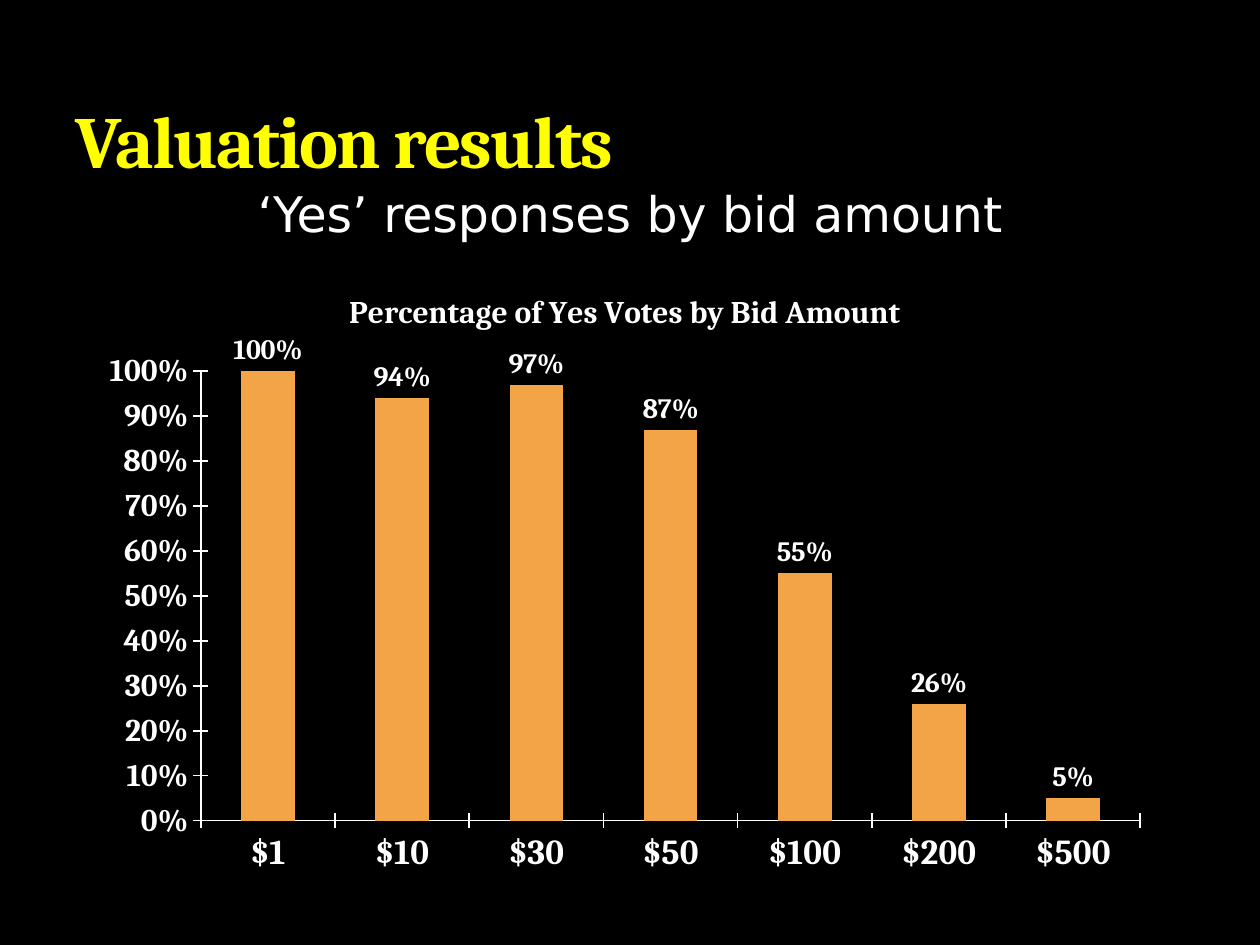
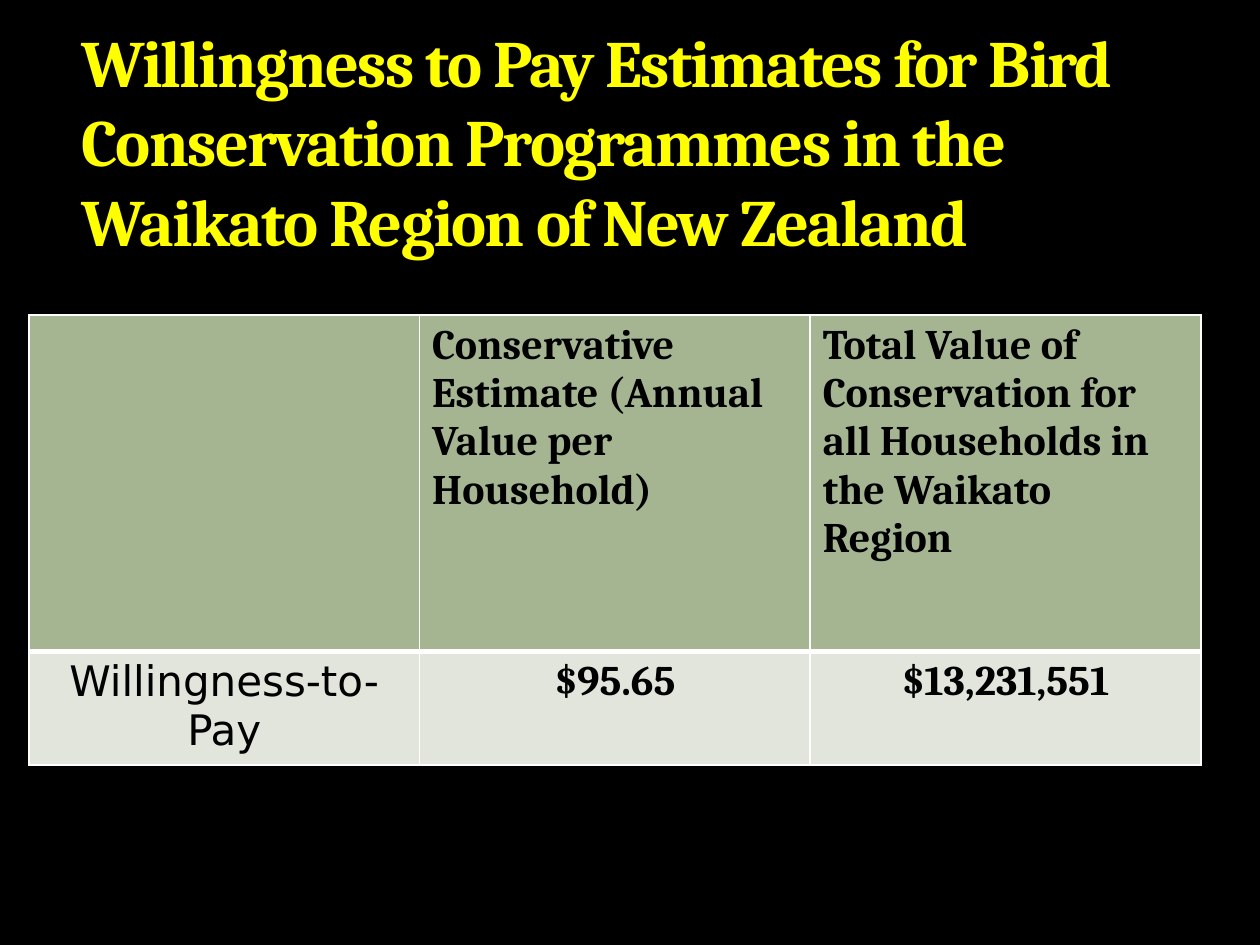
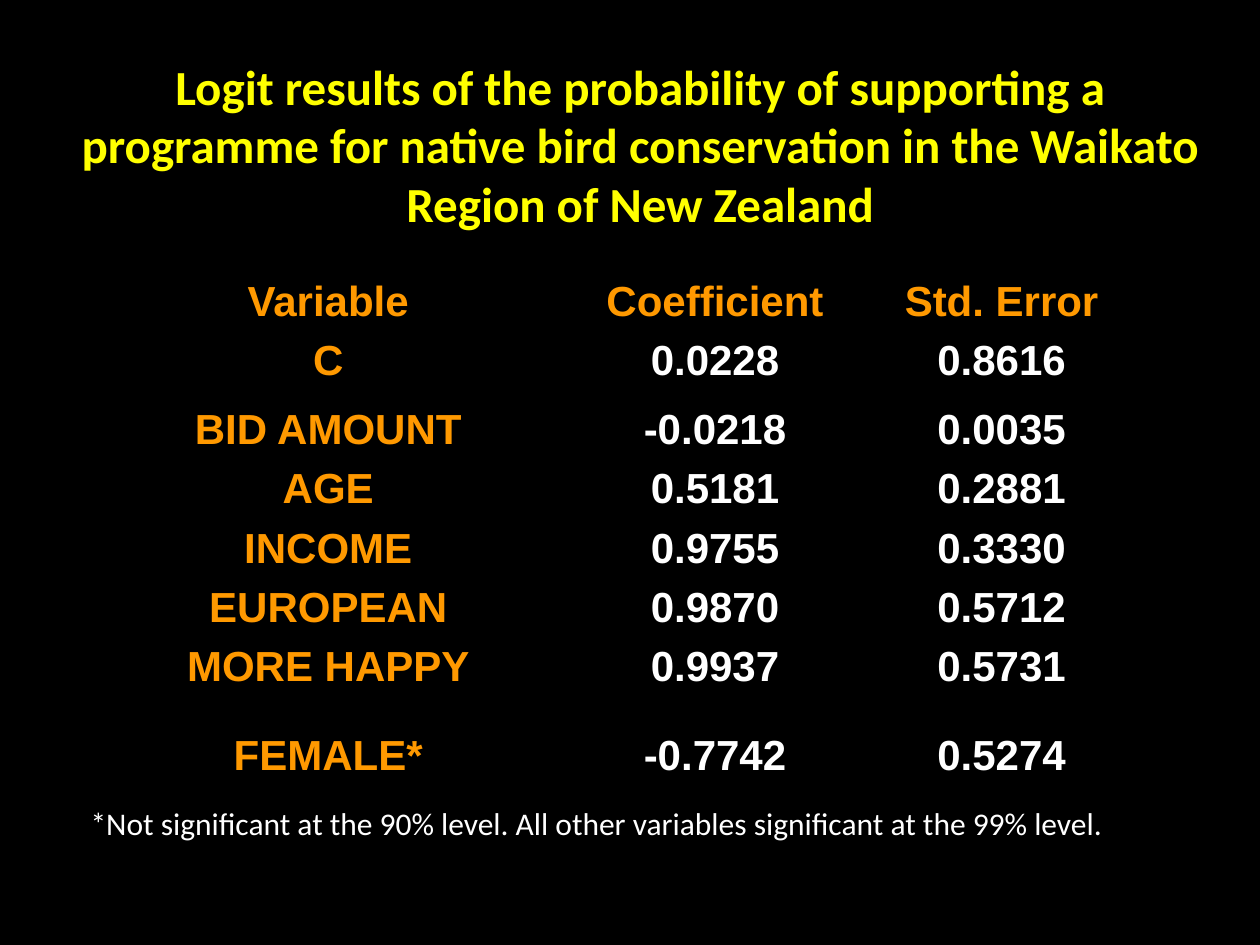
from dataclasses import dataclass

from lxml.etree import SubElement
from pptx import Presentation
from pptx.chart.data import CategoryChartData
from pptx.dml.color import RGBColor
from pptx.enum.chart import XL_CHART_TYPE, XL_LABEL_POSITION, XL_TICK_MARK
from pptx.enum.text import MSO_ANCHOR, PP_ALIGN
from pptx.oxml.ns import qn
from pptx.util import Inches, Pt


@dataclass(frozen=True)
class Theme:
    back: str = "000000"
    ink: str = "FFFFFF"
    dark: str = "000000"
    head: str = "FFFF00"
    edge: str = "3C4422"
    bar: str = "F3A447"
    label: str = "FF9900"
    green: str = "A5B592"
    pale: str = "E1E5DC"
    serif: str = "Cambria"
    sans: str = "DejaVu Sans"
    plain: str = "Calibri"
    grid: str = "Arial"
    title: float = 42
    long: float = 37.8
    lead: float = 28
    cell: float = 24
    axis: float = 20
    note: float = 18
    value: float = 16
    small: float = 10


PLAIN = "{2D5ABB26-0587-4C30-8999-92F81FD0307C}"  # table style without grid


class Deck:
    """Places elements on the current slide, on a grid of 100 columns and 75 rows."""

    cols, rows = 100, 75

    def __init__(self, theme):
        self.theme = theme
        self.show = Presentation()
        self.show.slide_width, self.show.slide_height = Inches(10), Inches(7.5)
        self.slide = None

    def add(self):
        self.slide = self.show.slides.add_slide(self.show.slide_layouts[6])
        fill = self.slide.background.fill
        fill.solid()
        fill.fore_color.rgb = RGBColor.from_string(self.theme.back)

    def wide(self, count):
        return round(self.show.slide_width * count / self.cols)

    def high(self, count):
        return round(self.show.slide_height * count / self.rows)

    def box(self, place):
        left, top, width, height = place
        return self.wide(left), self.high(top), self.wide(width), self.high(height)

    def style(self, font, face, size, color, bold=False):
        font.name, font.size, font.bold = face, Pt(size), bold
        font.color.rgb = RGBColor.from_string(color)

    def put(self, frame, words, look, align=None, lead=None):
        frame.text = words
        for para in frame.paragraphs:
            para.alignment, para.line_spacing = align, lead
            for run in para.runs:
                self.style(run.font, *look)

    def text(self, words, place, look, align=None, anchor=MSO_ANCHOR.TOP):
        frame = self.slide.shapes.add_textbox(*self.box(place)).text_frame
        frame.word_wrap = True
        frame.vertical_anchor = anchor
        self.put(frame, words, look, align)
        return frame

    def line(self, parent, tag, color, width, alpha=100):
        line = SubElement(parent, qn(tag), w=str(Pt(width)))
        tint = SubElement(SubElement(line, qn("a:solidFill")), qn("a:srgbClr"), val=color)
        if alpha < 100:
            SubElement(tint, qn("a:alpha"), val=str(alpha * 1000))
        return line

    def title(self, words, left, top, size):
        """Tight bold serif heading with a faint outline, standing on its box's base."""
        look = (self.theme.serif, size, self.theme.head, True)
        frame = self.text(words, (left, top, 90, 13.3), look, anchor=MSO_ANCHOR.BOTTOM)
        props = frame.paragraphs[0].runs[0].font._element
        props.set("spc", "-100")
        props.insert(0, self.line(props, "a:ln", self.theme.edge, 0.25, 25))

    def table(self, data, place, widths, heights, paint):
        """Make a plain table; paint(cell, row, col, words) fills in each cell."""
        frame = self.slide.shapes.add_table(len(heights), len(widths), *self.box(place))
        for mark in frame.element.iter(qn("a:tableStyleId")):
            mark.text = PLAIN
        table = frame.table
        for col, width in zip(table.columns, widths):
            col.width = self.wide(width)
        for row, height in zip(table.rows, heights):
            row.height = self.high(height)
        for i, row in enumerate(data):
            for j, words in enumerate(row):
                paint(table.cell(i, j), i, j, words)

    def border(self, cell, base):
        props = cell._tc.get_or_add_tcPr()
        sides = (("L", 1), ("R", 1), ("T", 1), ("B", base))
        for spot, (side, width) in enumerate(sides):
            props.insert(spot, self.line(props, f"a:ln{side}", self.theme.ink, width))

    def axis(self, axis, size):
        axis.has_major_gridlines = False
        axis.major_tick_mark = XL_TICK_MARK.CROSS
        axis.format.line.color.rgb = RGBColor.from_string(self.theme.ink)
        axis.format.line.width = Pt(1)
        self.style(axis.tick_labels.font, self.theme.serif, size, self.theme.ink, True)

    def chart(self, title, data, place):
        look = self.theme
        chart = self.slide.shapes.add_chart(
            XL_CHART_TYPE.COLUMN_CLUSTERED, *self.box(place), data).chart
        self.style(chart.font, look.serif, look.small, look.ink)
        chart.has_legend = False
        self.put(chart.chart_title.text_frame, title,
                 (look.serif, look.note, look.ink, True))
        self.axis(chart.category_axis, look.axis)
        self.axis(chart.value_axis, look.note)
        chart.value_axis.minimum_scale, chart.value_axis.maximum_scale = 0, 1
        chart.value_axis.major_unit = 0.1
        plot = chart.plots[0]
        plot.gap_width, plot.vary_by_categories = 150, False
        fill = plot.series[0].format.fill
        fill.solid()
        fill.fore_color.rgb = RGBColor.from_string(look.bar)
        plot.has_data_labels = True
        labels = plot.data_labels
        labels.show_value, labels.position = True, XL_LABEL_POSITION.OUTSIDE_END
        labels.number_format, labels.number_format_is_linked = "0%", False
        self.style(labels.font, look.serif, look.value, look.ink, True)
        return chart

    def inset(self, chart, left, top, width, height):
        """Fix the inner plot area, in shares of the chart's size."""
        area = chart._chartSpace.chart.plotArea
        for old in area.findall(qn("c:layout")):
            area.remove(old)
        layout = SubElement(area, qn("c:layout"))
        area.insert(0, layout)
        hand = SubElement(layout, qn("c:manualLayout"))
        marks = (("layoutTarget", "inner"), ("xMode", "edge"), ("yMode", "edge"),
                 ("x", left), ("y", top), ("w", width), ("h", height))
        for tag, value in marks:
            SubElement(hand, qn(f"c:{tag}"), val=str(value))


def votes(deck):
    look = deck.theme
    deck.add()
    deck.title("Valuation results", 5, 1.7, look.title)
    deck.text("‘Yes’ responses by bid amount", (0, 14.1, 100, 5.7),
              (look.sans, look.lead, look.ink), PP_ALIGN.CENTER)
    data = CategoryChartData(number_format="0%")
    data.categories = (1, 10, 30, 50, 100, 200, 500)
    data.categories.number_format = '"$"0'
    data.add_series("Series 1", (1, 0.94, 0.97, 0.87, 0.55, 0.26, 0.05))
    chart = deck.chart("Percentage of Yes Votes by Bid Amount", data,
                       (7, 21.1, 85.2, 49.2))
    deck.inset(chart, 0.105, 0.17, 0.875, 0.725)


def worth(deck):
    look = deck.theme
    deck.add()

    def paint(cell, row, col, words):
        face = look.serif if row == 0 or col else look.sans
        deck.put(cell.text_frame, words,
                 (face, look.cell, look.dark, face == look.serif),
                 PP_ALIGN.CENTER if row else None)
        cell.fill.solid()
        cell.fill.fore_color.rgb = RGBColor.from_string(look.pale if row else look.green)
        deck.border(cell, 1 if row else 3)

    data = (
        ("", "Conservative Estimate (Annual Value per Household)",
         "Total Value of Conservation for all Households in the Waikato Region"),
        ("Willingness-to-Pay", "$95.65", "$13,231,551"),
    )
    deck.table(data, (2.3, 25, 93, 32), [31] * 3, (26.7, 5.3), paint)
    deck.title("Willingness to Pay Estimates for Bird Conservation Programmes "
               "in the Waikato Region of New Zealand", 5.5, 7.8, look.long)


def logit(deck):
    look = deck.theme
    deck.add()

    def paint(cell, row, col, words):
        color = look.ink if row and col else look.label
        deck.put(cell.text_frame, words, (look.grid, look.cell, color, True),
                 PP_ALIGN.CENTER, 1.15)
        cell.vertical_anchor = MSO_ANCHOR.BOTTOM
        cell.margin_left = cell.margin_right = cell.margin_top = cell.margin_bottom = 0
        cell.fill.background()

    data = (
        ("Variable", "Coefficient", "Std. Error"),
        ("C", "0.0228", "0.8616"),
        ("BID AMOUNT", "-0.0218", "0.0035"),
        ("AGE", "0.5181", "0.2881"),
        ("INCOME", "0.9755", "0.3330"),
        ("EUROPEAN", "0.9870", "0.5712"),
        ("MORE HAPPY", "0.9937", "0.5731"),
        ("FEMALE*", "-0.7742", "0.5274"),
    )
    heights = [4.7, 4.7, 5.5] + [4.7] * 4 + [7.1]
    deck.table(data, (6.2, 21.1, 85.2, 40.7), (39.7, 21.7, 23.8), heights, paint)
    deck.text("Logit results of the probability of supporting a programme for native "
              "bird conservation in the Waikato Region of New Zealand",
              (5.5, 3.9, 90.6, 15.1), (look.plain, look.lead, look.head, True),
              PP_ALIGN.CENTER, MSO_ANCHOR.MIDDLE)
    deck.text("*Not significant at the 90% level. All other variables significant "
              "at the 99% level.", (6.2, 63.3, 87.5, 6.4),
              (look.plain, look.note, look.ink))


def main():
    deck = Deck(Theme())
    for build in (votes, worth, logit):
        build(deck)
    deck.show.save("out.pptx")


if __name__ == "__main__":
    main()
